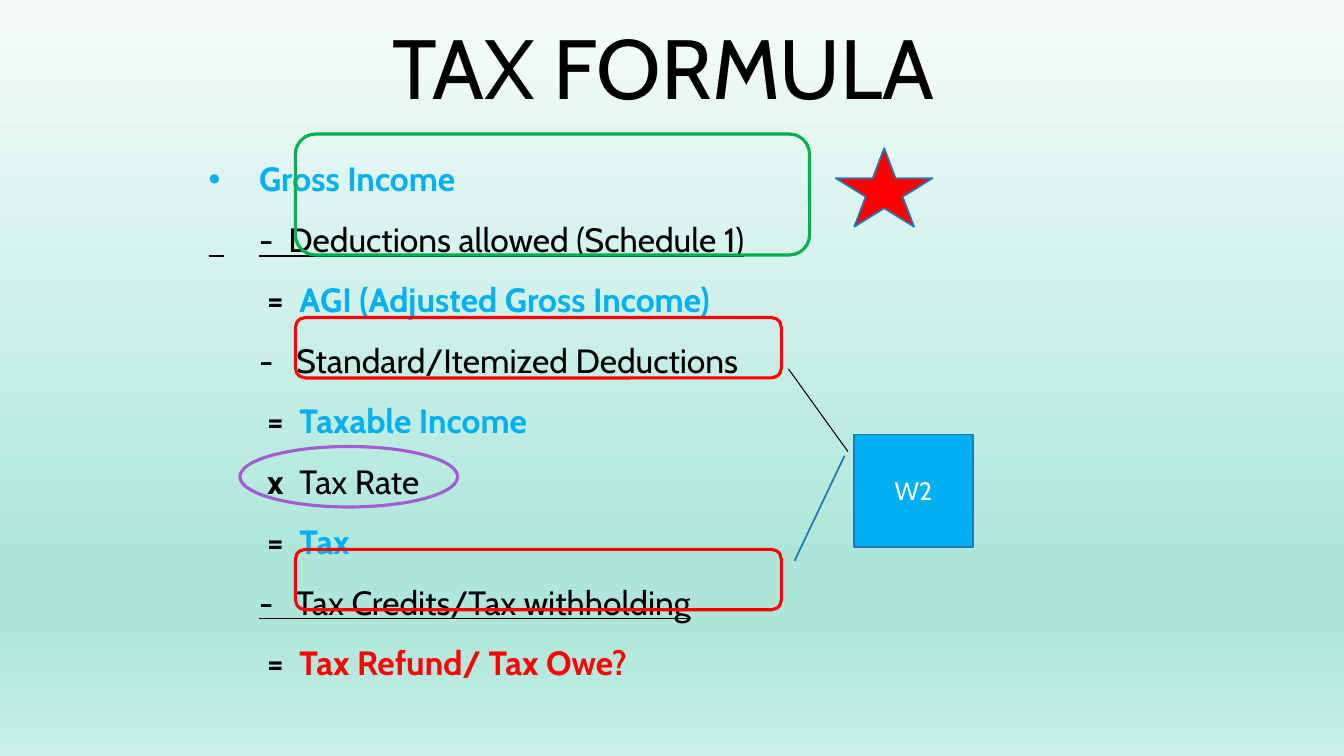
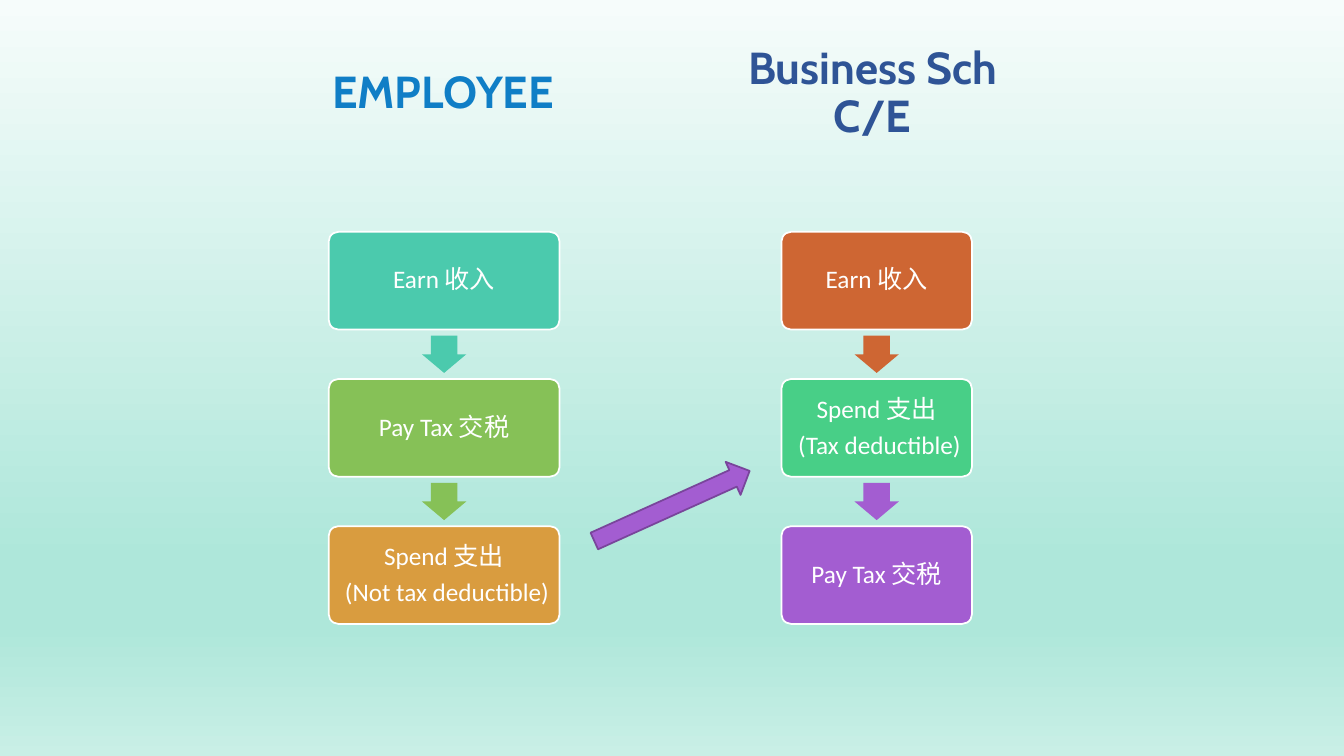
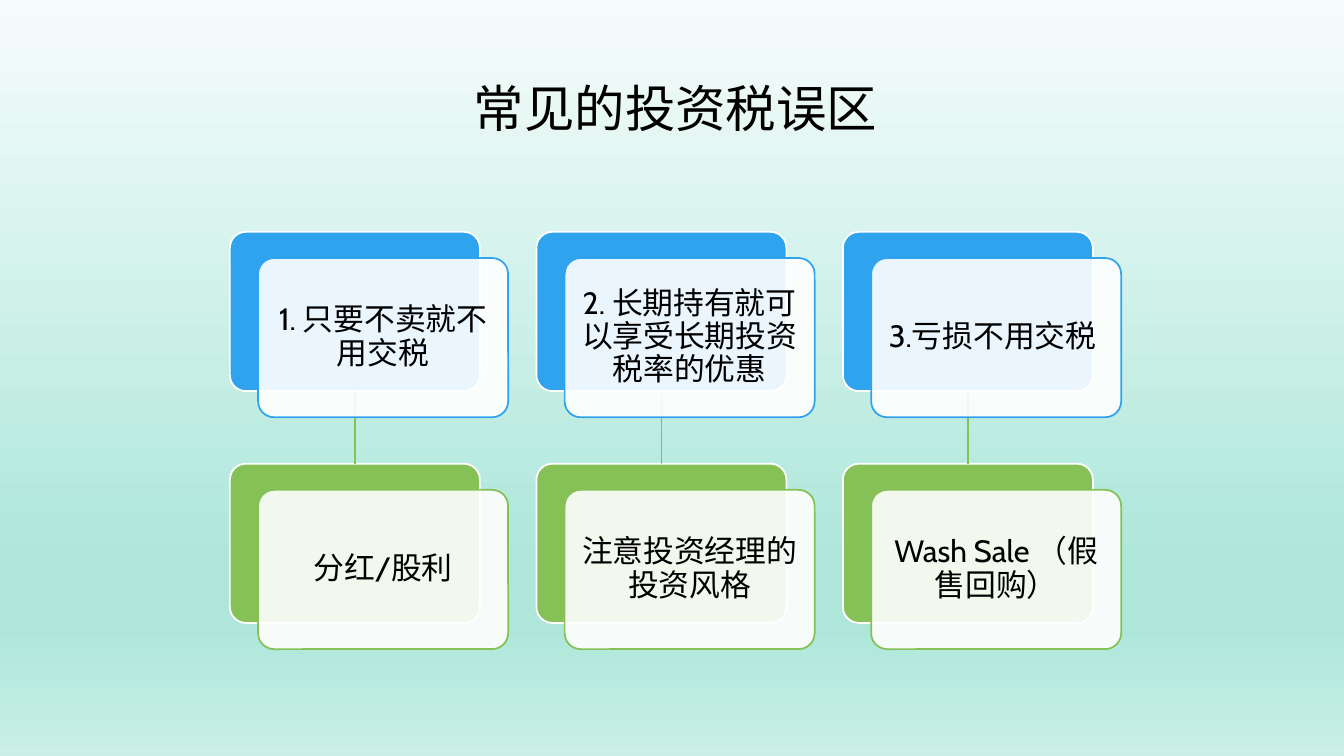
import pptx
import pptx.util
import pptx.dml.color
import pptx.enum.shapes
import pptx.enum.text
import pptx.oxml.ns
import pptx.oxml.xmlchemy

Inches = pptx.util.Inches
Pt = pptx.util.Pt
RGB = pptx.dml.color.RGBColor
SHAPE = pptx.enum.shapes.MSO_SHAPE
ALIGN = pptx.enum.text.PP_ALIGN
ANCHOR = pptx.enum.text.MSO_ANCHOR
qn = pptx.oxml.ns.qn

BLACK = RGB(0x00, 0x00, 0x00)
WHITE = RGB(0xFF, 0xFF, 0xFF)
SKY = RGB(0x00, 0xB0, 0xF0)
RED = RGB(0xFF, 0x00, 0x00)
GREEN = RGB(0x00, 0xB0, 0x50)
EDGE = RGB(0x23, 0x79, 0xB0)
PURPLE = RGB(0xA3, 0x5D, 0xD1)
PLUM = RGB(0x79, 0x45, 0x9B)
TEAL = RGB(0x4B, 0xCA, 0xAD)
LEAF = RGB(0x86, 0xC1, 0x57)
AMBER = RGB(0xD9, 0x9C, 0x3F)
RUST = RGB(0xCE, 0x66, 0x33)
MINT = RGB(0x48, 0xCF, 0x87)
BLUE = RGB(0x2F, 0xA3, 0xEE)
EMPLOYEE_BLUE = RGB(0x10, 0x7E, 0xC6)
BUSINESS_BLUE = RGB(0x2F, 0x54, 0x96)
BACKGROUND = [(0, "F6FCFB"), (74, "AEE7DA"), (83, "AEE7DA"), (100, "C9EFE6")]

FORMULA_BOX = (1.97, 1.37, 6.3, 5.6)
SIGN_HANG = (0.9, -0.32)
FORMULA = [
    dict(runs=[("Gross Income", SKY, True)], hang=(0.5, -0.5), bullet="•"),
    dict(runs=[("  \t-  Deductions allowed (Schedule 1)", BLACK, False)], hang=(0.5, -0.5), underline=True),
    dict(runs=[("=\t", BLACK, True), ("AGI (Adjusted Gross Income)", SKY, True)], hang=SIGN_HANG),
    dict(runs=[("-\tStandard/Itemized Deductions", BLACK, False)], hang=(0.87, -0.37)),
    dict(runs=[("=\t", BLACK, True), ("Taxable Income", SKY, True)], hang=SIGN_HANG),
    dict(runs=[("x\t", BLACK, True), ("Tax Rate", BLACK, False)], hang=SIGN_HANG),
    dict(runs=[("=\t", BLACK, True), ("Tax", SKY, True)], hang=SIGN_HANG),
    dict(runs=[("-   Tax Credits/Tax withholding", BLACK, False)], hang=(0.5, 0), underline=True),
    dict(runs=[("=\t", BLACK, True), ("Tax Refund/ Tax Owe?", RED, True)], hang=SIGN_HANG),
]
MARKS = [
    (SHAPE.ROUNDED_RECTANGLE, (2.93, 3.15, 4.82, 0.6), RED),
    (SHAPE.ROUNDED_RECTANGLE, (2.93, 5.45, 4.82, 0.6), RED),
    (SHAPE.ROUNDED_RECTANGLE, (2.93, 1.33, 5.1, 1.2), GREEN),
    (SHAPE.OVAL, (2.38, 4.43, 2.16, 0.6), PURPLE),
]

FLOWS = [
    dict(left=3.26, width=2.29, arrows=[TEAL, LEAF], steps=[
        ("Earn 收入", TEAL), ("Pay Tax 交税", LEAF), ("Spend 支出\n (Not tax deductible)", AMBER)]),
    dict(left=7.75, width=1.89, arrows=[RUST, PURPLE], steps=[
        ("Earn 收入", RUST), ("Spend 支出\n (Tax deductible)", MINT), ("Pay Tax 交税", PURPLE)]),
]
STEP_TOP, STEP_HEIGHT, STEP_PITCH = 2.3, 0.97, 1.46
ARROW_WIDTH, ARROW_HEIGHT = 0.44, 0.37

MYTHS = [
    ("1. 只要不卖就不用交税", "分红/股利"),
    ("2. 长期持有就可以享受长期投资税率的优惠", "注意投资经理的投资风格"),
    ("3.亏损不用交税 ", "Wash Sale （假售回购）"),
]
CARD_LEFT, CARD_TOP, CARD_WIDTH, CARD_HEIGHT = 2.28, 2.3, 2.48, 1.58
CARD_PITCH_X, CARD_PITCH_Y = 3.04, 2.3
CARD_SHIFT_X, CARD_SHIFT_Y = 0.28, 0.26


def element(tag, **attributes):
    node = pptx.oxml.xmlchemy.OxmlElement(tag)
    for key, value in attributes.items():
        node.set(key, str(value))
    return node


def write(target, text, size=18, color=BLACK, font="Cabin", bold=False, align=ALIGN.CENTER,
          anchor=ANCHOR.MIDDLE, spacing=0.9, after=0, inset=(0.1, 0.05)):
    frame = target.text_frame
    frame.word_wrap = True
    frame.auto_size = pptx.enum.text.MSO_AUTO_SIZE.NONE
    frame.vertical_anchor = anchor
    frame.margin_left = frame.margin_right = Inches(inset[0])
    frame.margin_top = frame.margin_bottom = Inches(inset[1])
    lines = text
    if isinstance(text, str):
        lines = [dict(runs=[(line, color, bold)]) for line in text.split("\n")]
    for index, line in enumerate(lines):
        paragraph = frame.add_paragraph() if index else frame.paragraphs[0]
        properties = paragraph._p.get_or_add_pPr()
        margin, indent = line.get("hang", (0, 0))
        properties.set("marL", str(Inches(margin)))
        properties.set("indent", str(Inches(indent)))
        if "bullet" in line:
            properties.append(element("a:buFont", typeface="Arial"))
            properties.append(element("a:buChar", char=line["bullet"]))
        else:
            properties.append(element("a:buNone"))
        paragraph.alignment = align
        paragraph.line_spacing = spacing
        paragraph.space_before = Pt(0)
        paragraph.space_after = Pt(after)
        for words, run_color, run_bold in line["runs"]:
            run = paragraph.add_run()
            run.text = words
            run.font.name = font
            run.font.size = Pt(size)
            run.font.bold = run_bold
            run.font.underline = line.get("underline", False)
            run.font.color.rgb = run_color


def place(target, box):
    target.left, target.top, target.width, target.height = map(Inches, box)


def draw(slide, kind, box, fill=None, line=None, weight=1.25, adjust=(), opacity=None):
    shape = slide.shapes.add_shape(kind, *map(Inches, box))
    shape.shadow.inherit = False
    for index, value in enumerate(adjust):
        shape.adjustments[index] = value
    if fill is None:
        shape.fill.background()
    else:
        shape.fill.solid()
        shape.fill.fore_color.rgb = fill
    if opacity is not None:
        shape._element.spPr.find(qn("a:solidFill"))[0].append(element("a:alpha", val=opacity * 1000))
    if line is None:
        shape.line.fill.background()
    else:
        shape.line.color.rgb = line
        shape.line.width = Pt(weight)
    return shape


def connect(slide, start, end, color, weight):
    link = slide.shapes.add_connector(
        pptx.enum.shapes.MSO_CONNECTOR.STRAIGHT, *map(Inches, start + end))
    link.line.color.rgb = color
    link.line.width = Pt(weight)
    link._element.spPr.append(element("a:effectLst"))
    return link


def paint_background(master):
    fill = master.background.fill
    fill.gradient()
    fill.gradient_angle = 270
    stops = master._element.find(".//" + qn("a:gsLst"))
    for stop in list(stops):
        stops.remove(stop)
    for position, tint in BACKGROUND:
        stop = element("a:gs", pos=position * 1000)
        stop.append(element("a:srgbClr", val=tint))
        stops.append(stop)


def new_slide(deck, layout, title, box, **style):
    slide = deck.slides.add_slide(deck.slide_layouts[layout])
    place(slide.shapes.title, box)
    write(slide.shapes.title, title, **style)
    return slide


def formula_slide(deck):
    slide = new_slide(deck, 1, "TAX FORMULA", (2.28, 0.12, 8.6, 1.2), size=60)
    formula = slide.placeholders[1]
    place(formula, FORMULA_BOX)
    write(formula, FORMULA, size=24, align=ALIGN.LEFT, anchor=ANCHOR.TOP, spacing=1.5, inset=(0.1, 0))
    for kind, box, color in MARKS:
        draw(slide, kind, box, line=color, weight=2.25)
    wage_form = draw(slide, SHAPE.LINE_CALLOUT_1, (8.47, 4.31, 1.18, 1.12), SKY, EDGE,
                     adjust=(0.19, -0.08, 1.12, -0.5))
    write(wage_form, "W2", color=WHITE, spacing=1)
    connect(slide, (7.82, 3.66), (8.41, 4.48), BLACK, 0.75)
    draw(slide, SHAPE.STAR_5_POINT, (8.29, 1.47, 0.96, 0.78), RED, EDGE)


def flow_slide(deck):
    slide = new_slide(deck, 5, "EMPLOYEE", (2.71, 0.41, 3.37, 1.04),
                      size=32, color=EMPLOYEE_BLUE, bold=True)
    business = slide.shapes.add_textbox(*map(Inches, (6.97, 0.2, 3.37, 1.47)))
    write(business, "Business Sch C/E", size=32, color=BUSINESS_BLUE, bold=True)
    for flow in FLOWS:
        left, width = flow["left"], flow["width"]
        for row, (label, color) in enumerate(flow["steps"]):
            top = STEP_TOP + row * STEP_PITCH
            step = draw(slide, SHAPE.ROUNDED_RECTANGLE, (left, top, width, STEP_HEIGHT),
                        color, WHITE, adjust=(0.1,))
            write(step, label, color=WHITE, font="Calibri", after=6.3, inset=(0.07, 0.07))
        for row, color in enumerate(flow["arrows"]):
            middle = STEP_TOP + row * STEP_PITCH + (STEP_HEIGHT + STEP_PITCH) / 2
            draw(slide, SHAPE.DOWN_ARROW,
                 (left + (width - ARROW_WIDTH) / 2, middle - ARROW_HEIGHT / 2, ARROW_WIDTH, ARROW_HEIGHT),
                 color, adjust=(0.6, 0.5))
    shift = draw(slide, SHAPE.RIGHT_ARROW, (5.82, 4.84, 1.69, 0.36), PURPLE, PLUM)
    shift.rotation = -24.3


def myths_slide(deck):
    slide = new_slide(deck, 5, "常见的投资税误区", (1.2, 0.31, 11, 1.59), size=36)
    tops = [CARD_TOP + row * CARD_PITCH_Y for row in range(2)]
    colors = (BLUE, LEAF)
    for column, labels in enumerate(MYTHS):
        left = CARD_LEFT + column * CARD_PITCH_X
        myth, fact = [
            draw(slide, SHAPE.ROUNDED_RECTANGLE, (left, top, CARD_WIDTH, CARD_HEIGHT),
                 color, WHITE, adjust=(0.1,))
            for top, color in zip(tops, colors)]
        center = left + CARD_WIDTH / 2
        link = connect(slide, (center, tops[0] + CARD_HEIGHT), (center, tops[1]), LEAF, 1.25)
        link.begin_connect(myth, 2)
        link.end_connect(fact, 0)
        for top, color, label in zip(tops, colors, labels):
            card = draw(slide, SHAPE.ROUNDED_RECTANGLE,
                        (left + CARD_SHIFT_X, top + CARD_SHIFT_Y, CARD_WIDTH, CARD_HEIGHT),
                        WHITE, color, adjust=(0.1,), opacity=90)
            write(card, label, size=22, after=7.7, inset=(0.09, 0.09))


def main():
    deck = pptx.Presentation()
    deck.slide_width, deck.slide_height = Inches(13.33), Inches(7.5)
    paint_background(deck.slide_master)
    formula_slide(deck)
    flow_slide(deck)
    myths_slide(deck)
    deck.save("out.pptx")


if __name__ == "__main__":
    main()
